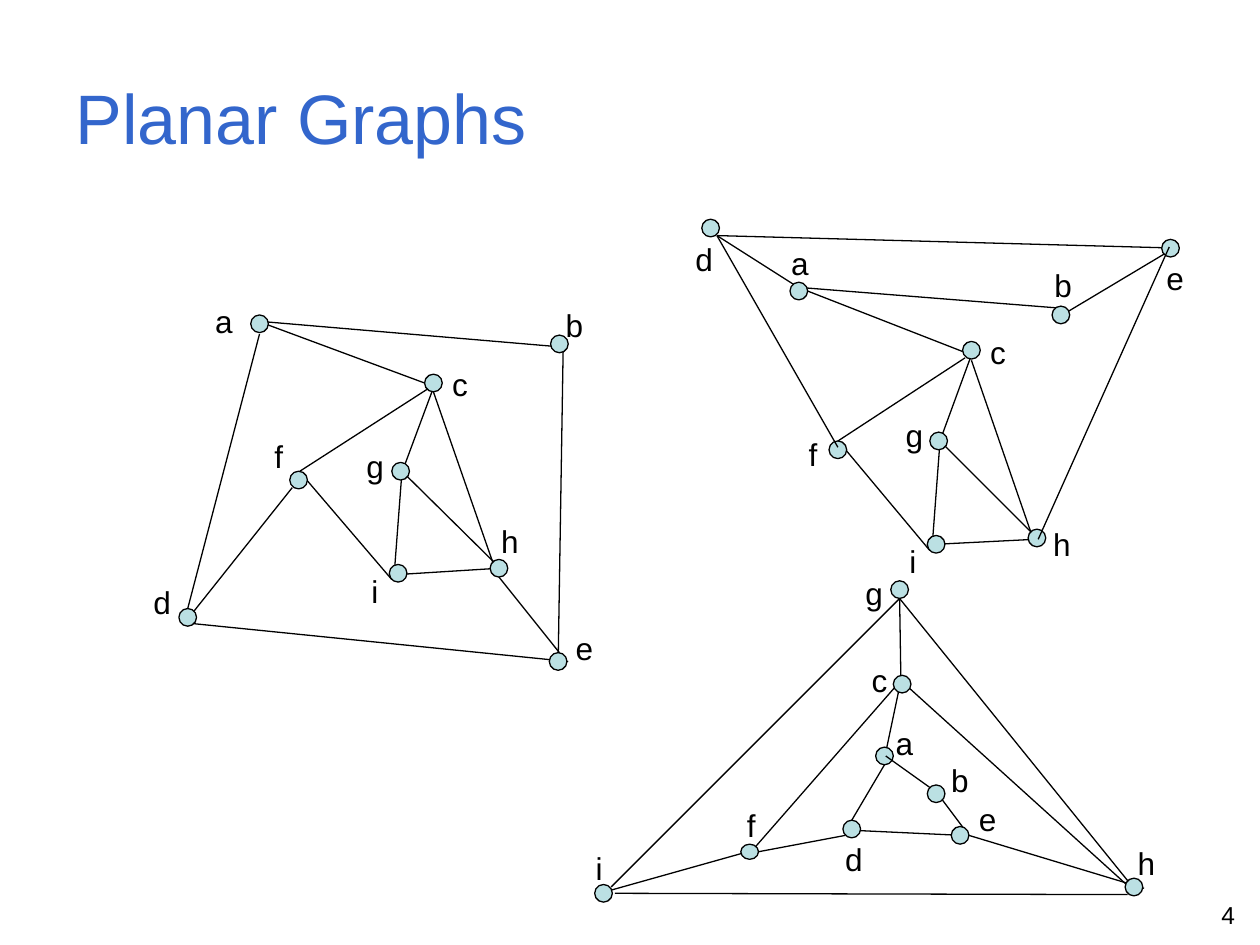
from lxml import etree
from pptx import Presentation
from pptx.dml.color import RGBColor
from pptx.enum.shapes import MSO_CONNECTOR, MSO_SHAPE
from pptx.enum.text import MSO_ANCHOR, MSO_AUTO_SIZE, PP_ALIGN
from pptx.oxml.ns import qn
from pptx.util import Inches, Pt

STRAIGHT, OVAL = MSO_CONNECTOR.STRAIGHT, MSO_SHAPE.OVAL
LEFT, RIGHT = PP_ALIGN.LEFT, PP_ALIGN.RIGHT
MIDDLE, GROW = MSO_ANCHOR.MIDDLE, MSO_AUTO_SIZE.SHAPE_TO_FIT_TEXT

COLORS = {"title": "3366CC", "text": "000000", "line": "000000", "node": "BBE0E3"}
COLS, ROWS = 1000, 750
CELL = Inches(10) // COLS
NODE_SIZE, LABEL_HEIGHT, LABEL_WIDTH = 14, 40, 34
NARROW_LABELS = {"c": 33, "f": 27, "i": 26}

# Nodes: column and row of the circle, then of its label, then any own height.
# Edges: start column and row, end column and row.
OUTER_DE = {
    "under": {
        "hi": (822, 428, 743, 432), "gh": (745, 349, 823, 427),
        "fi": (667, 352, 738, 437), "gc": (746, 350, 772, 279),
        "gi": (746, 351, 740, 431), "de": (569, 187, 936, 197),
        "ca": (764, 279, 641, 231), "be": (843, 250, 930, 198),
        "ab": (633, 228, 847, 245), "fc": (665, 350, 766, 284),
        "hc": (818, 422, 771, 286), "ad": (635, 229, 569, 187),
    },
    "nodes": {
        "a": (627, 224, 618, 189), "b": (835, 243, 827, 206),
        "c": (764, 271, 776, 259), "d": (557, 174, 542, 186),
        "e": (922, 190, 916, 201), "f": (658, 350, 632, 340),
        "g": (738, 343, 709, 325), "h": (816, 420, 826, 412),
        "i": (736, 425, 712, 425),
    },
    "over": {"fd": (665, 355, 569, 187), "eh": (928, 196, 824, 428)},
}
OUTER_ABDE = {
    "under": {
        "hi": (396, 451, 316, 456), "gh": (318, 373, 396, 450),
        "fi": (240, 377, 311, 460), "gc": (319, 375, 345, 305),
        "gi": (319, 375, 313, 454), "de": (154, 495, 451, 525),
        "ca": (337, 304, 213, 258), "be": (447, 276, 443, 525),
        "ab": (206, 255, 441, 275), "fc": (238, 374, 339, 309),
        "hc": (391, 446, 344, 311), "ad": (206, 265, 149, 483),
    },
    "nodes": {
        "a": (199, 250, 161, 235), "b": (437, 266, 439, 238),
        "c": (337, 297, 349, 285), "d": (142, 483, 112, 458),
        "e": (436, 518, 447, 494), "f": (230, 374, 208, 342),
        "g": (311, 367, 281, 350), "h": (389, 444, 388, 409),
        "i": (309, 448, 285, 449),
    },
    "over": {"fd": (232, 387, 154, 485), "eh": (444, 518, 396, 458)},
}
OUTER_GHI = {
    "under": {
        "ed": (763, 663, 677, 659), "ih": (488, 709, 895, 710),
        "fd": (602, 676, 671, 663), "ig": (485, 704, 714, 475),
        "if": (476, 709, 597, 675), "be": (748, 635, 769, 663),
        "gc": (714, 475, 715, 540), "ch": (716, 541, 894, 702),
        "ac": (702, 602, 715, 540), "fc": (597, 675, 715, 540),
        "hg": (895, 699, 714, 475), "ad": (702, 607, 676, 651),
        "eh": (769, 663, 908, 705),
    },
    "nodes": {
        "a": (695, 593, 701, 570), "b": (736, 623, 745, 599),
        "c": (709, 536, 682, 520), "d": (669, 651, 661, 662),
        "e": (755, 656, 767, 630), "f": (588, 670, 583, 635, 12),
        "g": (707, 461, 677, 451), "h": (893, 697, 893, 665),
        "i": (472, 702, 463, 669),
    },
    "over": {"ab": (703, 600, 738, 625)},
}


def cells(*values):
    """Turn grid positions into slide lengths."""
    return [v * CELL for v in values]


def color(key):
    """Look up a palette colour."""
    return RGBColor.from_string(COLORS[key])


def write(tf, text, size, key="text", align=LEFT, **frame):
    """Fill a text frame with one formatted run."""
    for name, value in frame.items():
        setattr(tf, name, value)
    p = tf.paragraphs[0]
    p.alignment = align
    r = p.add_run()
    r.text = text
    for name, value in {"name": "Arial", "size": Pt(size)}.items():
        setattr(r.font, name, value)
    r.font.color.rgb = color(key)


def outline(shape):
    """Give a shape or connector the thin graph line."""
    shape.line.color.rgb = color("line")
    shape.line.width = Pt(0.75)


def add_edge(shapes, ends):
    """Draw one edge without a shadow."""
    edge = shapes.add_connector(STRAIGHT, *cells(*ends))
    outline(edge)
    etree.SubElement(edge._element.spPr, qn("a:effectLst"))


def add_node(shapes, col, row, height=NODE_SIZE):
    """Draw one vertex circle."""
    node = shapes.add_shape(OVAL, *cells(col, row, NODE_SIZE, height))
    node.shadow.inherit = False
    node.fill.solid()
    node.fill.fore_color.rgb = color("node")
    outline(node)


def add_label(shapes, letter, col, row):
    """Write the letter of a vertex."""
    width = NARROW_LABELS.get(letter, LABEL_WIDTH)
    box = shapes.add_textbox(*cells(col, row, width, LABEL_HEIGHT))
    write(box.text_frame, letter, 18, word_wrap=False, auto_size=GROW)


def add_graph(s, graph):
    """Draw a grouped graph: edges, vertices, upper edges, letters."""
    shapes = s.shapes.add_group_shape().shapes
    for ends in graph["under"].values():
        add_edge(shapes, ends)
    for col, row, _, _, *height in graph["nodes"].values():
        add_node(shapes, col, row, *height)
    for ends in graph["over"].values():
        add_edge(shapes, ends)
    for letter, (_, _, col, row, *_) in graph["nodes"].items():
        add_label(shapes, letter, col, row)


def add_title(s, text):
    """Place and format the title placeholder."""
    title = s.shapes.title
    title.left, title.top, title.width, title.height = cells(50, 30, 900, 125)
    write(title.text_frame, text, 40, "title", vertical_anchor=MIDDLE, word_wrap=True)


def add_page_number(s, text):
    """Write the page number in the lower right corner."""
    box = s.shapes.add_textbox(*cells(757, 709, 233, 31))
    write(box.text_frame, text, 14, align=RIGHT, word_wrap=True)


def main():
    """Build and save the slide."""
    prs = Presentation()
    prs.slide_width, prs.slide_height = cells(COLS, ROWS)
    s = prs.slides.add_slide(prs.slide_layouts[5])
    add_page_number(s, "4")
    add_title(s, "Planar Graphs")
    for graph in (OUTER_DE, OUTER_ABDE, OUTER_GHI):
        add_graph(s, graph)
    prs.save("out.pptx")


if __name__ == "__main__":
    main()
